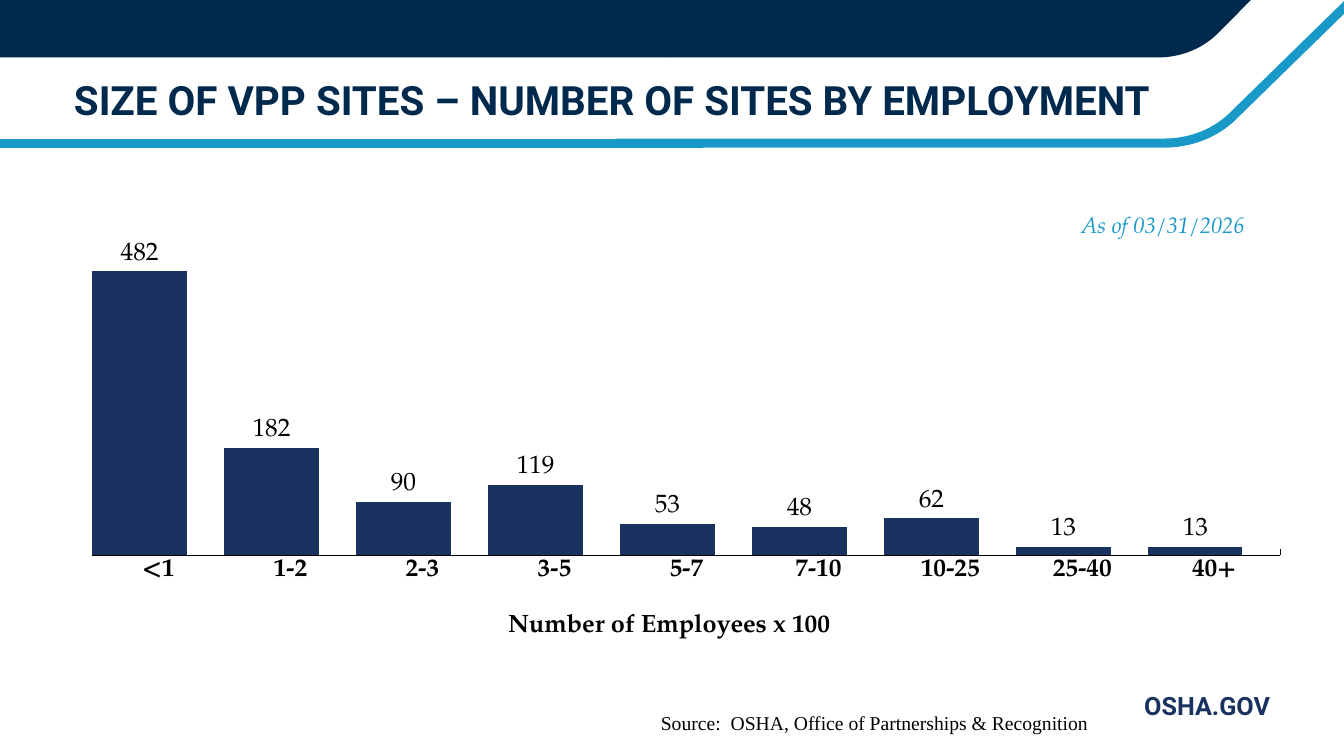
from lxml.etree import SubElement
from pptx import Presentation
from pptx.chart.data import CategoryChartData
from pptx.dml.color import RGBColor
from pptx.enum.chart import XL_CHART_TYPE as ChartType, XL_LABEL_POSITION as LabelPosition
from pptx.enum.chart import XL_TICK_LABEL_POSITION as TickLabels, XL_TICK_MARK as TickMark
from pptx.enum.shapes import MSO_CONNECTOR as Connector, MSO_SHAPE as Preset
from pptx.enum.text import MSO_ANCHOR as Anchor, PP_ALIGN as Align
from pptx.oxml.ns import qn
from pptx.util import Inches, Pt

NAVY, BAR_BLUE, SKY, BLACK = "00294E", "1A3260", "1999C8", "000000"
SERIF = "TeX Gyre Pagella"

presentation = Presentation()
presentation.slide_width = Inches(13.33)
presentation.slide_height = Inches(7.5)
slide = presentation.slides.add_slide(presentation.slide_layouts[6])
shapes = slide.shapes


def color(hex_string):
    return RGBColor.from_string(hex_string)


def percent(x, y):
    return (round(presentation.slide_width * x / 100),
            round(presentation.slide_height * y / 100))


stripe_curve = [(91.9, 15.07), (90.55, 17.6), (88.6, 18.93), (86.65, 18.93)]
band_curve = [(90.77, 4.13), (89.57, 6.4), (87.92, 7.6), (86.12, 7.6)]
outlines = [
    ((101.8, -2.13), stripe_curve, [(45.84, 18.93)], False),
    ((99.55, -11.6), band_curve, [(49.81, 7.6), (49.81, -11.6)], True),
]
steps = 16
header_parts = []
for start, curve, ending, closed in outlines:
    points = []
    for step in range(steps + 1):
        t = step / steps
        weights = [(1 - t) ** 3, 3 * t * (1 - t) ** 2, 3 * t ** 2 * (1 - t), t ** 3]
        points.append([sum(weight * control[axis] for weight, control in zip(weights, curve))
                       for axis in (0, 1)])
    builder = shapes.build_freeform(*percent(*start), scale=1)
    builder.add_line_segments([percent(*point) for point in points + ending], close=closed)
    header_parts.append((builder.convert_to_shape(), closed))
for corner, size in [((-0.15, -11.6), (50.04, 19.2)), ((47.71, -11.87), (4.05, 19.2))]:
    header_parts.append((shapes.add_shape(Preset.RECTANGLE, *percent(*corner), *percent(*size)), True))
for shape, filled in header_parts:
    shape.shadow.inherit = False
    if filled:
        shape.fill.solid()
        shape.fill.fore_color.rgb = color(NAVY)
        shape.line.fill.background()
    else:
        shape.fill.background()
        shape.line.color.rgb = color(SKY)
        shape.line.width = Pt(6.5)

for left, right, y, width in [(-0.15, 45.84, 18.93, 6.5), (39.38, 52.29, 19.07, 5.5)]:
    line = shapes.add_connector(Connector.STRAIGHT, *percent(left, y), *percent(right, y))
    line.line.color.rgb = color(SKY)
    line.line.width = Pt(width)
    SubElement(line._element.spPr, qn("a:effectLst"))

chart_data = CategoryChartData()
chart_data.categories = ["<1", "1-2", "2-3", "3-5", "5-7", "7-10", "10-25", "25-40", "40+"]
chart_data.add_series("Series 1", [482, 182, 90, 119, 53, 48, 62, 13, 13])
for name in ("Series 2", "Series 3"):
    chart_data.add_series(name, [None] * 9)
chart = shapes.add_chart(ChartType.COLUMN_CLUSTERED, *percent(4.8, 23.6),
                         *percent(90.47, 61.87), chart_data).chart
chart.has_legend = False
chart.has_title = False
chart.font.name = SERIF
chart.font.size = Pt(18.1)
chart.font.bold = True
chart.font.color.rgb = color(BLACK)

plot = chart.plots[0]
plot.gap_width = 0
plot.overlap = 80
plot.vary_by_categories = False
for series, fill in zip(plot.series, (BAR_BLUE, "4590B8", "45CBE8")):
    series.format.fill.solid()
    series.format.fill.fore_color.rgb = color(fill)
labels = plot.series[0].data_labels
labels.show_value = True
labels.position = LabelPosition.OUTSIDE_END
labels.font.name = SERIF
labels.font.size = Pt(18.1)
labels.font.bold = False
labels.font.color.rgb = color(BLACK)

value_axis = chart.value_axis
value_axis.minimum_scale = 0
value_axis.maximum_scale = 600
value_axis.has_major_gridlines = False
value_axis.major_tick_mark = TickMark.NONE
value_axis.tick_label_position = TickLabels.NONE
value_axis.format.line.fill.background()

category_axis = chart.category_axis
category_axis.major_tick_mark = TickMark.INSIDE
category_axis.format.line.color.rgb = color(BLACK)
category_axis.format.line.width = Pt(0.25)
axis_title = category_axis.axis_title
axis_title.text_frame.text = "Number of Employees x 100"
title_font = axis_title.text_frame.paragraphs[0].font
title_font.name = SERIF
title_font.size = Pt(18.1)
title_font.bold = True
title_font.color.rgb = color(BLACK)

plot_area = chart._chartSpace.chart.plotArea
layouts = [
    (plot_area, 0, [("layoutTarget", "inner"), ("xMode", "edge"), ("yMode", "edge"),
                    ("x", 0.023), ("y", 0.051), ("w", 0.977), ("h", 0.763)]),
    (axis_title._element, 1, [("xMode", "edge"), ("yMode", "edge"), ("x", 0.361), ("y", 0.927)]),
]
for parent, index, settings in layouts:
    for old_layout in parent.findall(qn("c:layout")):
        parent.remove(old_layout)
    layout = SubElement(parent, qn("c:layout"))
    parent.insert(index, layout)
    manual = SubElement(layout, qn("c:manualLayout"))
    for tag, value in settings:
        SubElement(manual, qn("c:" + tag)).set("val", str(value))

texts = [
    ("OSHA.GOV", (45.2, 90.67), (50.04, 5.33), "Roboto", 18, BAR_BLUE, True, False,
     Align.RIGHT, Anchor.TOP),
    ("SIZE OF VPP SITES – NUMBER OF SITES BY EMPLOYMENT", (4.77, 9.45), (81.77, 7.47),
     "Roboto", 28.8, NAVY, True, False, Align.LEFT, Anchor.MIDDLE),
    ("As of 03/31/2026", (75.92, 24.67), (21.23, 10), SERIF, 16, SKY, False, True,
     Align.CENTER, Anchor.MIDDLE),
    ("Source:  OSHA, Office of Partnerships & Recognition", (48.43, 93.33), (38.41, 4.4),
     "Times New Roman", 14, BLACK, False, False, Align.LEFT, Anchor.TOP),
]
for text, corner, size, font_name, points, hue, bold, italic, align, anchor in texts:
    frame = shapes.add_textbox(*percent(*corner), *percent(*size)).text_frame
    frame.word_wrap = True
    frame.vertical_anchor = anchor
    paragraph = frame.paragraphs[0]
    paragraph.text = text
    paragraph.alignment = align
    paragraph.font.name = font_name
    paragraph.font.size = Pt(points)
    paragraph.font.bold = bold
    paragraph.font.italic = italic
    paragraph.font.color.rgb = color(hue)

presentation.save("out.pptx")
